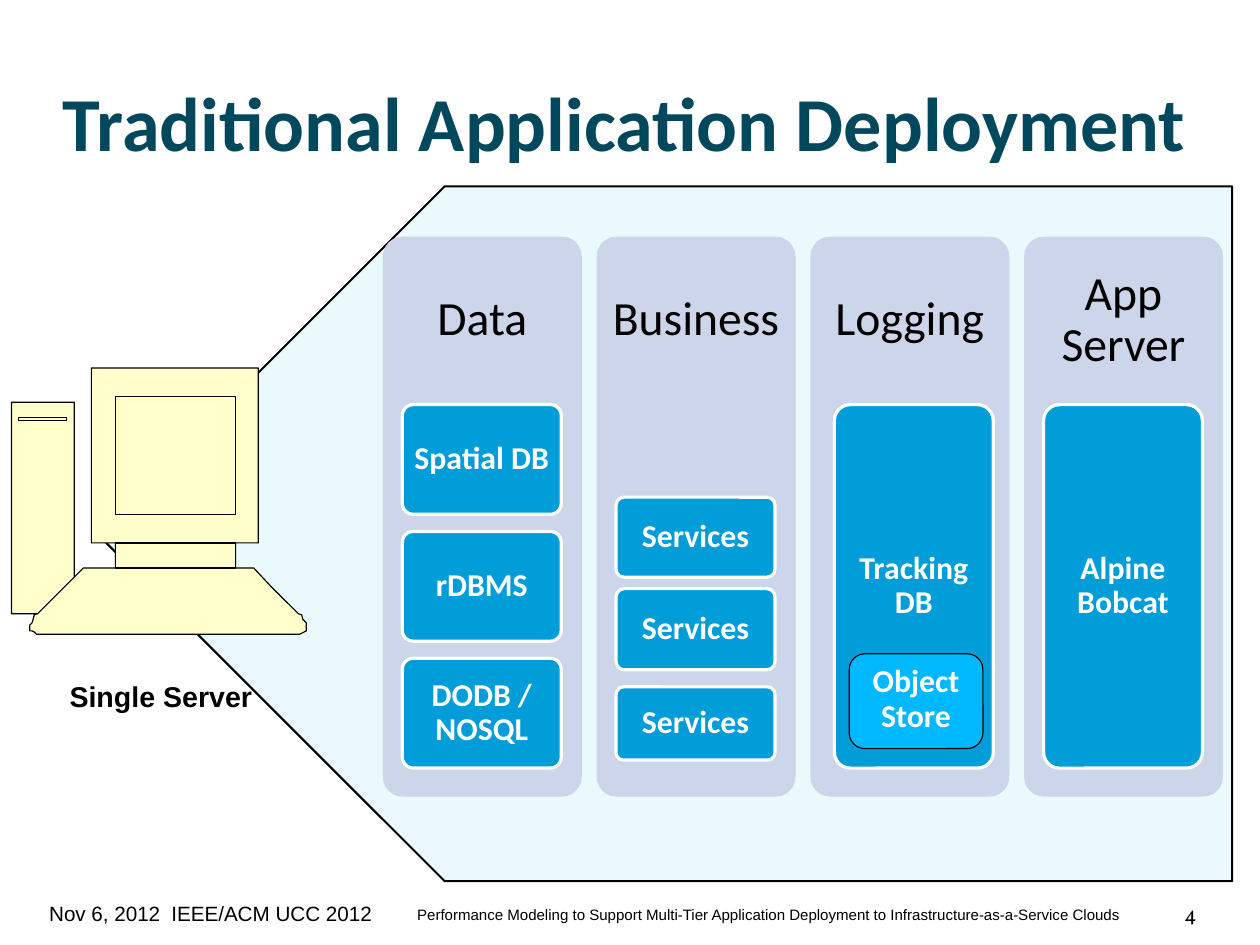
"""Build the slide on deploying an application to a single server."""
import pptx
import pptx.dml.color
import pptx.enum.shapes
import pptx.enum.text
import pptx.oxml
import pptx.oxml.ns
import pptx.util

Inches = pptx.util.Inches
color = pptx.dml.color.RGBColor.from_string
SHAPE = pptx.enum.shapes.MSO_SHAPE
ALIGN = pptx.enum.text.PP_ALIGN
ANCHOR = pptx.enum.text.MSO_ANCHOR


def paint(shape, fill, line=None, width=0.75):
    """Set fill and outline and drop the shadow."""
    shape.shadow.inherit = False
    shape.fill.solid()
    shape.fill.fore_color.rgb = color(fill)
    if line:
        shape.line.color.rgb = color(line)
        shape.line.width = pptx.util.Pt(width)
    else:
        shape.line.fill.background()


def write(shape, text, size, ink, font="Calibri", bold=False, align=ALIGN.CENTER,
          anchor=ANCHOR.MIDDLE, insets=(0, 0, 0, 0), spacing=0.9, wrap=True):
    """Put one formatted run into the shape."""
    frame = shape.text_frame
    frame.word_wrap = wrap
    frame.vertical_anchor = anchor
    frame.margin_left, frame.margin_top, frame.margin_right, frame.margin_bottom = map(Inches, insets)
    paragraph = frame.paragraphs[0]
    paragraph.alignment = align
    paragraph.line_spacing = spacing
    run = paragraph.add_run()
    run.text = text
    run.font.name = font
    run.font.size = pptx.util.Pt(size)
    run.font.bold = bold
    run.font.color.rgb = color(ink)


presentation = pptx.Presentation()
presentation.slide_width = pptx.util.Cm(28)
presentation.slide_height = pptx.util.Cm(21)
slide = presentation.slides.add_slide(presentation.slide_layouts[5])
shapes = slide.shapes

title = shapes.title
title.left, title.top, title.width, title.height = map(Inches, (0.55, -0.09, 9.92, 2.23))
write(title, "Traditional Application Deployment", 48, "02485C", bold=True,
      align=ALIGN.LEFT, insets=(0, 0.06, 0, 0), spacing=1.0)

footers = [
    ("Nov 6, 2012", 0.43, 7.78, 1.05, 13, "Arial", ALIGN.LEFT),
    ("IEEE/ACM UCC 2012", 1.5, 7.78, 2, 13, "Arial", ALIGN.LEFT),
    ("Performance Modeling to Support Multi-Tier Application Deployment to "
     "Infrastructure-as-a-Service Clouds", 3.65, 7.79, 6.4, 9.5, "Arial", ALIGN.LEFT),
    ("4", 10.1, 7.78, 0.37, 13, "Vollkorn", ALIGN.RIGHT),
]
for text, left, top, width, size, font, align in footers:
    footer = shapes.add_textbox(Inches(left), Inches(top), Inches(width), Inches(0.44))
    write(footer, text, size, "000000", font, align=align, spacing=0.93, wrap=False)

server_zone = shapes.add_shape(SHAPE.PENTAGON, Inches(0.85), Inches(1.63), Inches(9.93), Inches(6.08))
server_zone.rotation = 180
paint(server_zone, "DBF5F9", "000000", 1.25)
zone_color = server_zone.fill._xPr.find(".//" + pptx.oxml.ns.qn("a:srgbClr"))
zone_color.append(pptx.oxml.parse_xml(
    '<a:alpha xmlns:a="http://schemas.openxmlformats.org/drawingml/2006/main" val="57000"/>'))

tiers = [
    ("Data", 0.17, [("Spatial DB", 3.54, 0.96), ("rDBMS", 4.65, 0.96), ("DODB / NOSQL", 5.76, 0.96)]),
    ("Business", 0.17, [("Services", 4.35, 0.7), ("Services", 5.15, 0.71), ("Services", 6.01, 0.64)]),
    ("Logging", 0.21, [("Tracking DB", 3.54, 3.18)]),
    ("App Server", 0.17, [("Alpine Bobcat", 3.54, 3.18)]),
]
for index, (tier, indent, parts) in enumerate(tiers):
    left = 3.35 + 1.87 * index
    column = shapes.add_shape(SHAPE.ROUNDED_RECTANGLE, Inches(left), Inches(2.07), Inches(1.74), Inches(4.9))
    column.adjustments[0] = 0.1
    paint(column, "CCD5EA")
    write(column, tier, 30, "000000", insets=(0.05, 0.12, 0.05, 3.55))
    for part, top, height in parts:
        card = shapes.add_shape(SHAPE.ROUNDED_RECTANGLE, Inches(left + indent), Inches(top),
                                Inches(1.39), Inches(height))
        card.adjustments[0] = 0.1
        paint(card, "009DD9", "FFFFFF", 2)
        write(card, part, 20, "FFFFFF", bold=True, insets=(0.03, 0.04, 0.03, 0.04))

object_store = shapes.add_shape(SHAPE.ROUNDED_RECTANGLE, Inches(7.43), Inches(5.72), Inches(1.17), Inches(0.83))
paint(object_store, "00B8FF", "000000")
write(object_store, "Object Store", 20, "FFFFFF", bold=True, anchor=ANCHOR.TOP,
      insets=(0.1, 0.05, 0.1, 0.05), spacing=0.93)

computer_outline = [
    (73, 497), (101, 497), (101, 475), (80, 475), (80, 322), (226, 322), (226, 475), (206, 475),
    (206, 497), (222, 497), (237, 513), (261, 537), (264, 538), (265, 542), (268, 545), (268, 552),
    (266, 553), (262, 555), (34, 555), (32, 555), (30, 553), (28, 552), (26, 552), (26, 547),
    (28, 545), (29, 542), (30, 538), (33, 537), (10, 537), (10, 352), (65, 352), (65, 505), (33, 537),
]
computer = shapes.add_group_shape()
builder = computer.shapes.build_freeform(65, 505, scale=Inches(0.01))
builder.add_line_segments(computer_outline, close=True)
paint(builder.convert_to_shape(), "FFFFCC", "000000")
for left, top, width, height in [(1.01, 3.47, 1.05, 1.03), (0.16, 3.65, 0.42, 0.03), (1.01, 4.75, 1.05, 0.22)]:
    panel = computer.shapes.add_shape(SHAPE.RECTANGLE, Inches(left), Inches(top), Inches(width), Inches(height))
    paint(panel, "FFFFCC", "000000")

server_label = shapes.add_textbox(Inches(0.51), Inches(5.92), Inches(1.81), Inches(0.38))
write(server_label, "Single Server", 18, "000000", "Arial", True, ALIGN.LEFT, ANCHOR.TOP,
      (0.1, 0.05, 0.1, 0.05), 0.93, False)

presentation.save("out.pptx")
